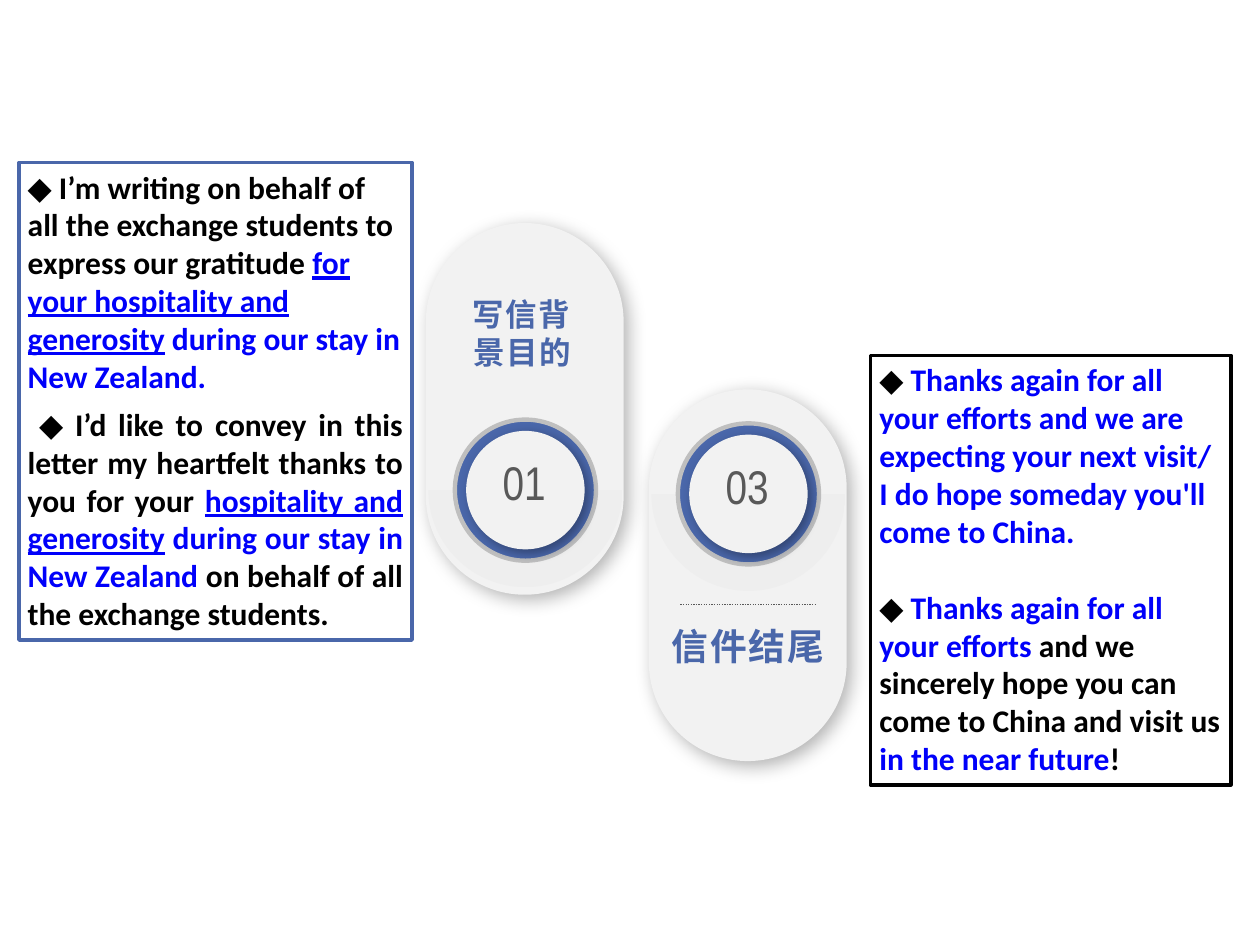
from lxml.etree import SubElement
from pptx import Presentation
from pptx.dml.color import RGBColor
from pptx.enum.dml import MSO_LINE
from pptx.enum.shapes import MSO_CONNECTOR, MSO_SHAPE
from pptx.enum.text import MSO_ANCHOR, PP_ALIGN
from pptx.oxml.ns import qn
from pptx.util import Inches, Pt

THEME = {
    "blue": RGBColor.from_string("4A67AA"),
    "pill": RGBColor.from_string("F2F2F2"),
    "halo": RGBColor.from_string("EEEEEE"),
    "rim": RGBColor.from_string("BFBFBF"),
    "gray": RGBColor.from_string("595959"),
    "white": RGBColor.from_string("FFFFFF"),
    "black": RGBColor.from_string("000000"),
    "phrase": RGBColor.from_string("0000FA"),
    "body_size": Pt(18),
    "number_size": Pt(27),
    "body_font": "Calibri",
    "number_font": "Arial Narrow",
    "label_font": "Noto Sans CJK SC",
}

presentation = Presentation()
presentation.slide_width = Inches(10)
presentation.slide_height = Inches(7.5)
slide = presentation.slides.add_slide(presentation.slide_layouts[6])


def add_filled(kind, left, top, width, height, color, shadow=None):
    """Add a borderless shape; shadow is (color, opacity %, blur pt, distance pt)."""
    shape = slide.shapes.add_shape(kind, Inches(left), Inches(top), Inches(width), Inches(height))
    shape.shadow.inherit = False
    shape.fill.solid()
    shape.fill.fore_color.rgb = color
    shape.line.fill.background()
    if shadow:
        shadow_color, opacity, blur, distance = shadow
        effects = shape._element.spPr.find(qn("a:effectLst"))
        outer = SubElement(effects, qn("a:outerShdw"), blurRad=str(Pt(blur)),
                           dist=str(Pt(distance)), dir="2700000", algn="tl", rotWithShape="0")
        tint = SubElement(outer, qn("a:srgbClr"), val=shadow_color)
        SubElement(tint, qn("a:alpha"), val=str(opacity * 1000))
    return shape


def add_run(paragraph, text, **formats):
    run = paragraph.add_run()
    run.text = text
    for name, value in formats.items():
        if name == "color":
            run.font.color.rgb = value
        else:
            setattr(run.font, name, value)
    return run


# Pills with a numbered ring: left, top, ring top, number, label, label box, label size
pills = [
    (3.38, 1.77, 3.12, "01", "写信背景目的", (3.61, 2.29, 1.07, 0.71), 18),
    (5.15, 3.09, 3.15, "03", "信件结尾", (5.16, 4.9, 1.55, 0.45), 21),
]
for left, top, ring_top, number, label, label_box, label_size in pills:
    pill = add_filled(MSO_SHAPE.ROUNDED_RECTANGLE, left, top, 1.57, 2.95,
                      THEME["pill"], ("000000", 29, 11, 4))
    pill.adjustments[0] = 0.5

    halo = add_filled(MSO_SHAPE.OVAL, left + 0.02, ring_top, 1.54, 1.54, THEME["pill"])
    halo.fill.gradient()
    halo.fill.gradient_angle = 270
    for stop, color in zip(halo.fill.gradient_stops, (THEME["pill"], THEME["halo"])):
        stop.color.rgb = color

    ring = add_filled(MSO_SHAPE.OVAL, left + 0.23, ring_top + 0.21, 1.12, 1.12, THEME["blue"])
    ring.line.color.rgb = THEME["rim"]
    ring.line.width = Pt(2.5)
    add_filled(MSO_SHAPE.OVAL, left + 0.32, ring_top + 0.3, 0.94, 0.94,
               THEME["pill"], ("253355", 64, 6, 3))

    texts = [
        (label, label_box, {"size": Pt(label_size), "name": THEME["label_font"],
                            "bold": True, "color": THEME["blue"]}),
        (number, (left + 0.26, ring_top + 0.43, 1.04, 0.55),
         {"size": THEME["number_size"], "name": THEME["number_font"], "color": THEME["gray"]}),
    ]
    for text, box, formats in texts:
        text_box = slide.shapes.add_textbox(*map(Inches, box))
        text_box.text_frame.word_wrap = True
        paragraph = text_box.text_frame.paragraphs[0]
        paragraph.alignment = PP_ALIGN.CENTER
        run = add_run(paragraph, text, **formats)
        if text == label:
            properties = run.font._element
            properties.set("spc", "100")
            SubElement(properties, qn("a:ea"), typeface=THEME["label_font"])

divider = slide.shapes.add_connector(MSO_CONNECTOR.STRAIGHT, Inches(5.4), Inches(4.8),
                                     Inches(6.48), Inches(4.8))
divider.line.color.rgb = THEME["gray"]
divider.line.width = Pt(0.75)
divider.line.dash_style = MSO_LINE.ROUND_DOT
SubElement(divider._element.spPr, qn("a:effectLst"))

# Run styles used in the sample sentences
styles = {
    "plain": {"color": THEME["black"]},
    "phrase": {"color": THEME["phrase"]},
    "key": {"color": THEME["phrase"], "underline": True},
}
# Sample boxes: position, border, gap before later paragraphs, their format, paragraphs
samples = [
    ((0.15, 1.29, 3.12, 3.79), THEME["blue"], Pt(6), PP_ALIGN.JUSTIFY, Inches(0.09), [
        [("plain", "◆ I’m writing on behalf of all the exchange students to express our gratitude "),
         ("key", "for your hospitality and generosity"),
         ("plain", " "),
         ("phrase", "during our stay in New Zealand.")],
        [("plain", "◆ I’d like to convey in this letter my heartfelt thanks to you for your "),
         ("key", "hospitality and generosity"),
         ("plain", " "),
         ("phrase", "during our stay in New Zealand "),
         ("plain", "on behalf of all the exchange students.")],
    ]),
    ((6.91, 2.82, 2.86, 3.41), THEME["black"], Pt(22), PP_ALIGN.LEFT, 0, [
        [("plain", "◆ "),
         ("phrase", "Thanks again for all your efforts and we are expecting your next visit/ "
                    "I do hope someday you'll come to China.")],
        [("plain", "◆ "),
         ("phrase", "Thanks again for all your efforts"),
         ("plain", " and we sincerely hope you can come to China and visit us "),
         ("phrase", "in the near future"),
         ("plain", "!")],
    ]),
]
for box, border, gap, alignment, indent, paragraphs in samples:
    sample = add_filled(MSO_SHAPE.RECTANGLE, *box, THEME["white"])
    sample.line.color.rgb = border
    sample.line.width = Pt(2)
    frame = sample.text_frame
    frame_formats = {
        "word_wrap": True, "vertical_anchor": MSO_ANCHOR.TOP,
        "margin_left": Inches(0.07), "margin_right": Inches(0.07),
        "margin_top": Inches(0.04), "margin_bottom": Inches(0.04),
    }
    for name, value in frame_formats.items():
        setattr(frame, name, value)
    for index, runs in enumerate(paragraphs):
        paragraph = frame.add_paragraph() if index else frame.paragraphs[0]
        paragraph.alignment = alignment if index else PP_ALIGN.LEFT
        if index:
            paragraph.space_before = gap
            paragraph._p.get_or_add_pPr().set("indent", str(indent))
        for style, text in runs:
            add_run(paragraph, text, size=THEME["body_size"], name=THEME["body_font"],
                    bold=True, **styles[style])

presentation.save("out.pptx")
